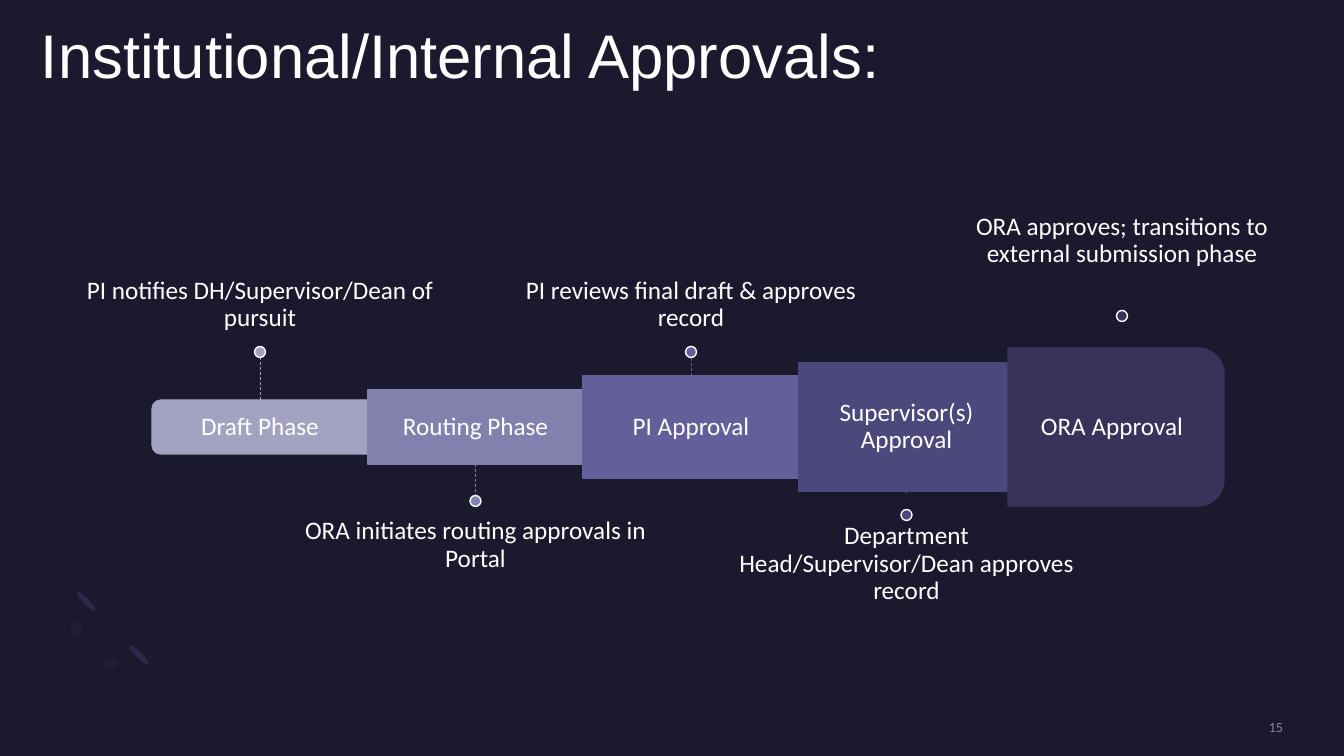
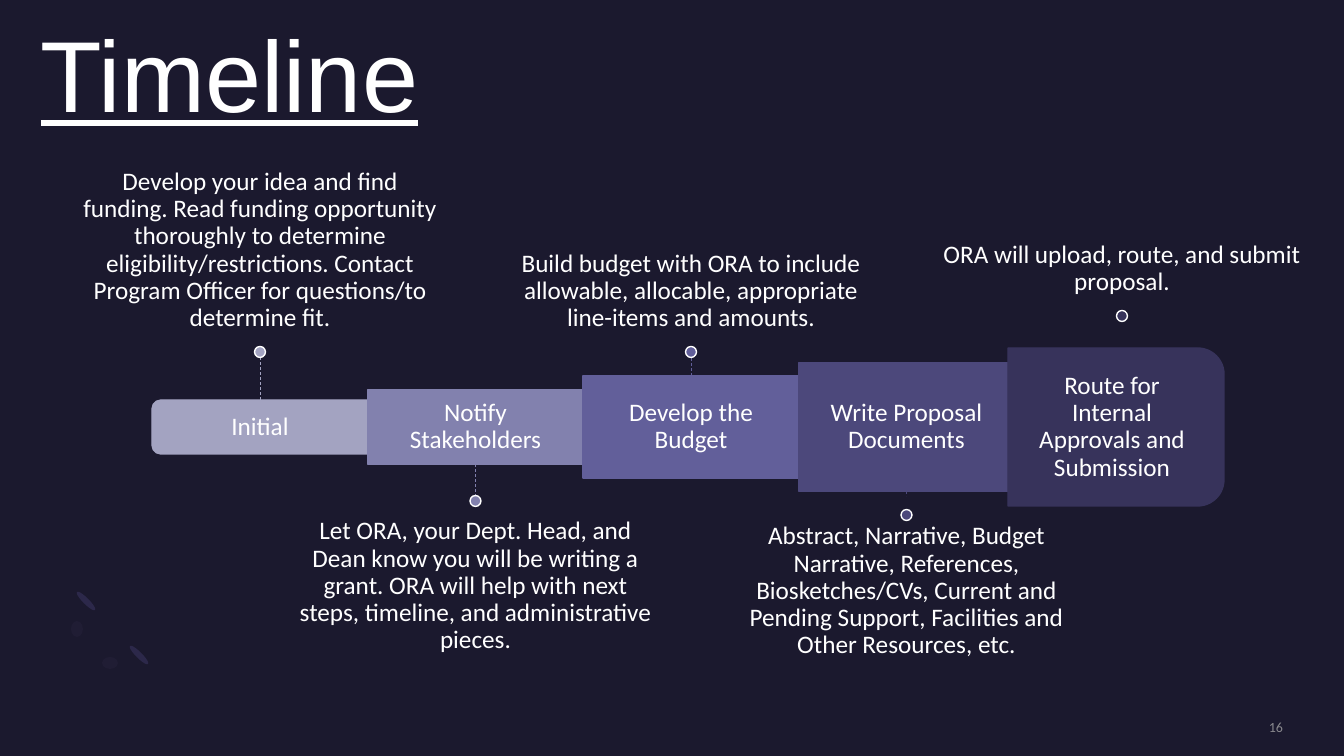
from dataclasses import dataclass

from lxml import etree
from pptx import Presentation
from pptx.dml.color import RGBColor
from pptx.enum.dml import MSO_LINE
from pptx.enum.shapes import MSO_CONNECTOR, MSO_SHAPE
from pptx.enum.text import MSO_ANCHOR, PP_ALIGN
from pptx.oxml.ns import qn
from pptx.util import Emu, Pt

ELLIPSE, RECT, ROUND_TOP = MSO_SHAPE.OVAL, MSO_SHAPE.RECTANGLE, MSO_SHAPE.ROUND_2_SAME_RECTANGLE
STRAIGHT, DASH = MSO_CONNECTOR.STRAIGHT, MSO_LINE.DASH
TOP, MIDDLE, BOTTOM = MSO_ANCHOR.TOP, MSO_ANCHOR.MIDDLE, MSO_ANCHOR.BOTTOM
LEFT, CENTER, RIGHT = PP_ALIGN.LEFT, PP_ALIGN.CENTER, PP_ALIGN.RIGHT
SITE_TOP, SITE_BOTTOM = 0, 2

SLIDE_W, SLIDE_H = 1344, 756
EMU_PER_PX = 12192000 / SLIDE_W


@dataclass(frozen=True)
class Theme:
    """Colours, fonts and type sizes of the deck."""
    back: str = "1B192E"
    text: str = "FFFFFF"
    muted: str = "A6A6A6"
    leaf: str = "2C284A"
    spot: str = "201D34"
    title_font: str = "Arial"
    body_font: str = "Calibri"
    body_size: int = 18
    number_size: int = 10


@dataclass(frozen=True)
class Stage:
    """Look of one step; lengths are px, offsets count from the axis."""
    color: str
    height: int
    dot: int
    caption: int
    shift: int = 0
    turn: int = 0
    label_dx: int = 0


THEME = Theme()
STAGES = [
    Stage("A3A3C1", 54, -75, -80, turn=270, label_dx=4),
    Stage("8281AE", 74, 74, 76),
    Stage("625F9A", 102, -75, -80),
    Stage("4C487B", 128, 88, 81),
    Stage("37335B", 158, -111, -80, shift=-6, turn=90),
]
AXIS, BAR_W, END_LABEL_W = 268, 216, 208
CAPTION_W, CAPTION_H, PAD = 360, 188, 15
DOT, LINE_TIP = 11, 69

SLIDES = [
    dict(title="Institutional/Internal Approvals:", size=44, underline=False, number="15", lift=64, steps=[
        ("Draft Phase", "PI notifies DH/Supervisor/Dean of pursuit"),
        ("Routing Phase", "ORA initiates routing approvals in Portal"),
        ("PI Approval", "PI reviews final draft & approves record"),
        ("Supervisor(s) Approval", "Department Head/Supervisor/Dean approves record"),
        ("ORA Approval", "ORA approves; transitions to external submission phase"),
    ]),
    dict(title="Timeline", size=72, underline=True, number="16", lift=36, steps=[
        ("Initial", "Develop your idea and find funding. Read funding opportunity thoroughly to "
                    "determine eligibility/restrictions. Contact Program Officer for questions/to "
                    "determine fit."),
        ("Notify Stakeholders", "Let ORA, your Dept. Head, and Dean know you will be writing a grant. "
                                "ORA will help with next steps, timeline, and administrative pieces."),
        ("Develop the Budget", "Build budget with ORA to include allowable, allocable, appropriate "
                               "line-items and amounts."),
        ("Write Proposal Documents", "Abstract, Narrative, Budget Narrative, References, Biosketches/CVs, "
                                     "Current and Pending Support, Facilities and Other Resources, etc."),
        ("Route for Internal Approvals and Submission", "ORA will upload, route, and submit proposal."),
    ]),
]


def px(*values):
    """Turn px into EMU."""
    return [Emu(round(v * EMU_PER_PX)) for v in values]


def rgb(color):
    """Return a colour from its hex text."""
    return RGBColor.from_string(color)


def write(sp, text, size=THEME.body_size, font=THEME.body_font, color=THEME.text,
          align=CENTER, anchor=MIDDLE, pads=(0, 0, 0, 0), spacing=0.9, underline=None):
    """Set one paragraph in a shape and return its run."""
    tf = sp.text_frame
    tf.word_wrap = True
    tf.vertical_anchor = anchor
    tf.margin_left, tf.margin_top, tf.margin_right, tf.margin_bottom = px(*pads)
    p = tf.paragraphs[0]
    p.alignment, p.line_spacing = align, spacing
    r = p.add_run()
    r.text = text
    r.font.size, r.font.name, r.font.underline = Pt(size), font, underline
    r.font.color.rgb = rgb(color)
    return r


def add_text(s, box, text, **style):
    """Add a text box and return its run."""
    return write(s.shapes.add_textbox(*px(*box)), text, **style)


def add_shape(s, kind, cx, cy, w, h, fill, line=None, turn=0):
    """Add a filled shape around a centre point."""
    sp = s.shapes.add_shape(kind, *px(cx - w / 2, cy - h / 2, w, h))
    sp.shadow.inherit = False
    sp.rotation = turn
    sp.fill.solid()
    sp.fill.fore_color.rgb = rgb(fill)
    if line:
        sp.line.color.rgb = rgb(line)
        sp.line.width = Pt(1)
    else:
        sp.line.fill.background()
    return sp


def add_ornament(s, x, y):
    """Place the small leaves and spots in the lower corner."""
    for dx, dy in ((15, 10), (68, 64)):
        add_shape(s, ELLIPSE, x + dx, y + dy, 6, 26, THEME.leaf, turn=135)
    for dx, dy, w, h in ((6, 38, 12, 16), (39, 72, 16, 12)):
        add_shape(s, ELLIPSE, x + dx, y + dy, w, h, THEME.spot)


def add_title(s, box, text, size, underline):
    """Place the slide title."""
    add_text(s, box, text, size=size, font=THEME.title_font, align=LEFT, anchor=TOP,
             underline=underline or None)


def add_number(s, box, number):
    """Place the faded slide number."""
    r = add_text(s, box, number, size=THEME.number_size, color=THEME.muted, align=RIGHT, spacing=1.0)
    color = next(r._r.iter(qn("a:srgbClr")))
    etree.SubElement(color, qn("a:alpha")).set("val", "80000")


def add_bar(s, stage, cx, axis, label):
    """Place a step's bar with its label."""
    cx += stage.shift
    if not stage.turn:
        bar = add_shape(s, RECT, cx, axis, BAR_W, stage.height, stage.color, stage.color)
        write(bar, label, pads=(PAD,) * 4)
        return bar
    bar = add_shape(s, ROUND_TOP, cx, axis, stage.height, BAR_W, stage.color, stage.color, stage.turn)
    box = (cx - BAR_W / 2 + stage.label_dx, axis - stage.height / 2, END_LABEL_W, stage.height)
    add_text(s, box, label, pads=(PAD,) * 4)
    return bar


def add_stem(s, stage, bar, cx, axis):
    """Run a dashed line from the bar towards its dot."""
    side = 1 if stage.dot > 0 else -1
    start, tip = axis + side * stage.height / 2, axis + side * LINE_TIP
    line = s.shapes.add_connector(STRAIGHT, *px(cx, start, cx, tip))
    if not stage.turn:
        line.begin_connect(bar, SITE_BOTTOM if side > 0 else SITE_TOP)
    line.line.color.rgb = rgb(stage.color)
    line.line.width = Pt(0.5)
    line.line.dash_style = DASH
    etree.SubElement(line._element.spPr, qn("a:effectLst"))


def add_caption(s, stage, cx, axis, text, lift):
    """Place a step's caption above or below its dot."""
    x, edge = cx - CAPTION_W / 2, axis + stage.caption
    if stage.caption > 0:
        add_text(s, (x, edge, CAPTION_W, CAPTION_H), text, anchor=TOP, pads=(0, PAD, 0, 0))
    else:
        add_text(s, (x, edge - CAPTION_H - lift, CAPTION_W, CAPTION_H), text,
                 anchor=BOTTOM, pads=(0, 0, 0, PAD))


def add_timeline(s, box, steps, lift):
    """Place the growing chain of steps in a box."""
    x, y, w = box
    axis = y + AXIS
    pitch = (w - CAPTION_W) / (len(STAGES) - 1)
    for i, (stage, (label, caption)) in enumerate(zip(STAGES, steps)):
        cx = x + CAPTION_W / 2 + i * pitch
        bar = add_bar(s, stage, cx, axis, label)
        add_caption(s, stage, cx, axis, caption, lift if stage is STAGES[-1] else 0)
        if stage.height / 2 < LINE_TIP:
            add_stem(s, stage, bar, cx, axis)
        add_shape(s, ELLIPSE, cx, axis + stage.dot, DOT, DOT, stage.color, THEME.text)


def add_slide(prs, title, size, underline, number, lift, steps):
    """Build one timeline slide."""
    s = prs.slides.add_slide(prs.slide_layouts[6])
    add_ornament(s, 71, 591)
    add_title(s, (41, 25, 1223, 147), title, size, underline)
    add_timeline(s, (80, 159, 1222), steps, lift)
    add_number(s, (1097, 718, 186, 17), number)


def main():
    """Build and save the deck."""
    prs = Presentation()
    prs.slide_width, prs.slide_height = px(SLIDE_W, SLIDE_H)
    fill = prs.slide_master.background.fill
    fill.solid()
    fill.fore_color.rgb = rgb(THEME.back)
    for content in SLIDES:
        add_slide(prs, **content)
    prs.save("out.pptx")


if __name__ == "__main__":
    main()
